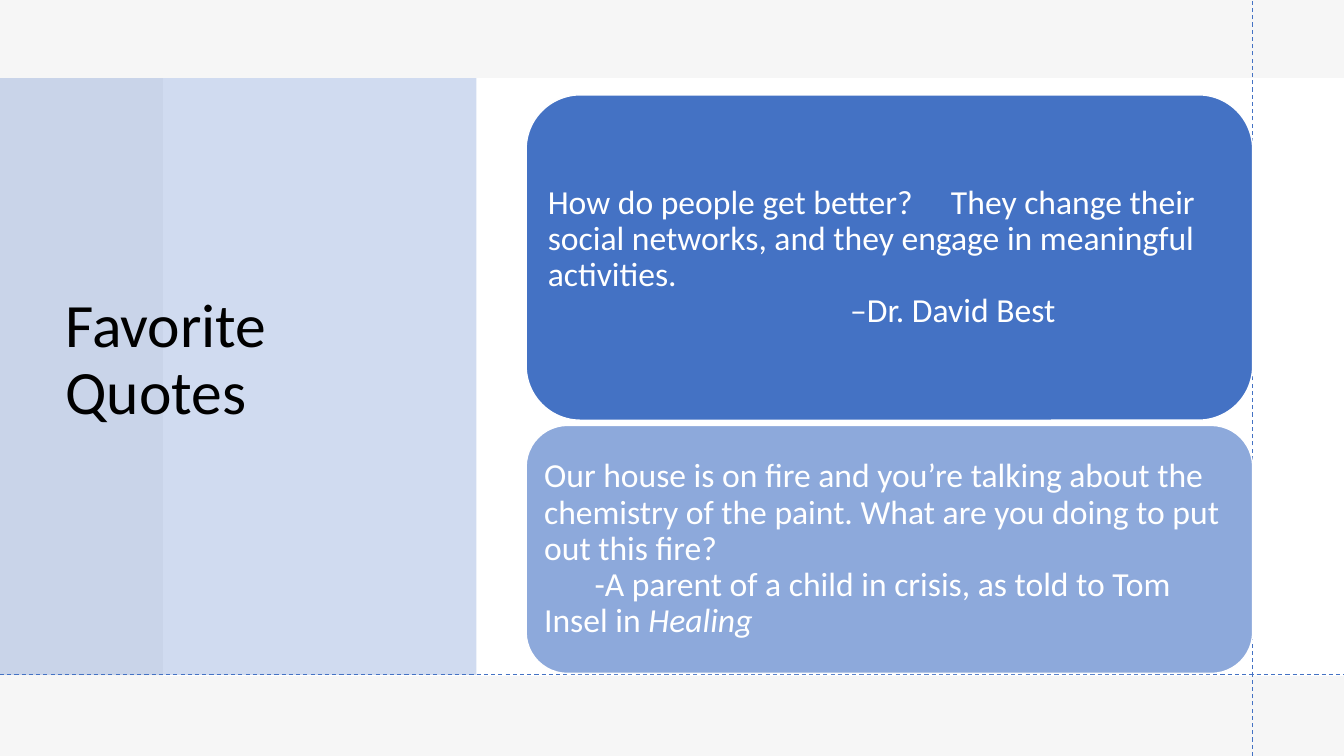
from lxml.etree import SubElement
from pptx import Presentation
from pptx.dml.color import RGBColor
from pptx.enum.dml import MSO_LINE
from pptx.enum.shapes import MSO_CONNECTOR, MSO_SHAPE
from pptx.enum.text import MSO_ANCHOR
from pptx.oxml.ns import qn
from pptx.util import Cm, Pt

WHITE = RGBColor(0xFF, 0xFF, 0xFF)
BLACK = RGBColor(0x00, 0x00, 0x00)
GREY = RGBColor(0xE7, 0xE6, 0xE6)
PALE_GREY = RGBColor(0xF7, 0xF6, 0xF6)
BLUE = RGBColor(0x44, 0x72, 0xC4)
LIGHT_BLUE = RGBColor(0x8D, 0xA9, 0xDB)

PAGE_WIDTH, PAGE_HEIGHT = 33.87, 19.05
BAND_TOP, BAND_HEIGHT = 1.97, 15.06
CARD_LEFT, CARD_WIDTH = 13.26, 18.31
CORNER = 0.167
CORNER_INSET = CORNER * 0.29

QUOTES = [
    (2.39, 8.2, BLUE, [
        (0, 0, [("How do people get better? \tThey change their social networks, "
                 "and they engage in meaningful activities.", False)]),
        (7.62, 0, [("–Dr. David Best", False)]),
    ]),
    (10.72, 6.25, LIGHT_BLUE, [
        (0, 0, [("Our house is on fire and you’re talking about the chemistry of "
                 "the paint. What are you doing to put out this fire?", False)]),
        (0, 1.27, [("-A parent of a child in crisis, as told to Tom Insel in ", False),
                   ("Healing", True)]),
    ]),
]


def apply(target, values):
    for name, value in values.items():
        setattr(target, name, value)


def add_block(slide, box, color, opacity=100, kind=MSO_SHAPE.RECTANGLE):
    block = slide.shapes.add_shape(kind, *map(Cm, box))
    block.shadow.inherit = False
    block.fill.solid()
    block.fill.fore_color.rgb = color
    block.line.fill.background()
    if opacity < 100:
        tint = block.fill._xPr.find(qn("a:solidFill"))[0]
        SubElement(tint, qn("a:alpha")).set("val", str(opacity * 1000))
    return block


def add_text(slide, box, paragraphs, size, color, margin_x, margin_y):
    frame = slide.shapes.add_textbox(*map(Cm, box)).text_frame
    apply(frame, {
        "word_wrap": True,
        "vertical_anchor": MSO_ANCHOR.MIDDLE,
        "margin_left": Cm(margin_x),
        "margin_right": Cm(margin_x),
        "margin_top": Cm(margin_y),
        "margin_bottom": Cm(margin_y),
    })
    for index, (left, first_line, runs) in enumerate(paragraphs):
        paragraph = frame.add_paragraph() if index else frame.paragraphs[0]
        paragraph.line_spacing = 0.9
        properties = paragraph._p.get_or_add_pPr()
        properties.set("marL", str(Cm(left)))
        properties.set("indent", str(Cm(first_line)))
        for words, italic in runs:
            run = paragraph.add_run()
            run.text = words
            apply(run.font, {"name": "Calibri", "size": Pt(size), "italic": italic})
            run.font.color.rgb = color


def add_guide(slide, start, end):
    guide = slide.shapes.add_connector(MSO_CONNECTOR.STRAIGHT, *map(Cm, start + end))
    guide.line.color.rgb = BLUE
    apply(guide.line, {"width": Pt(0.75), "dash_style": MSO_LINE.DASH})
    SubElement(guide._element.spPr, qn("a:effectLst"))


def add_backdrop(slide, box):
    left, top, width, height = box
    add_block(slide, box, WHITE)
    add_block(slide, box, GREY, 35)
    band_left = left + 4.11
    add_block(slide, (band_left, top + BAND_TOP, width - band_left, BAND_HEIGHT), WHITE)


def add_title_panel(slide, box):
    left, top, width, height = box
    add_block(slide, box, BLUE, 25)
    add_text(slide, (left + 1.4, top - 0.09, width - 1.98, height - 0.59),
             [(0, 0, [("Favorite Quotes", False)])], 44, BLACK, 0.25, 0.13)


def add_quote_card(slide, box, color, paragraphs):
    left, top, width, height = box
    card = add_block(slide, box, color, kind=MSO_SHAPE.ROUNDED_RECTANGLE)
    card.adjustments[0] = CORNER
    card.line.color.rgb = WHITE
    card.line.width = Pt(1)
    inset = height * CORNER_INSET
    add_text(slide, (left + inset, top + inset, width - 2 * inset, height - 2 * inset),
             paragraphs, 24, WHITE, 0.15, 0.15)


def main():
    deck = Presentation()
    apply(deck, {"slide_width": Cm(PAGE_WIDTH), "slide_height": Cm(PAGE_HEIGHT)})
    slide = deck.slides.add_slide(deck.slide_layouts[6])
    slide.background.fill.solid()
    slide.background.fill.fore_color.rgb = PALE_GREY

    add_backdrop(slide, (0, 0, PAGE_WIDTH, PAGE_HEIGHT))
    add_title_panel(slide, (0, BAND_TOP, 12.01, 15.04))
    guide_x, guide_y = CARD_LEFT + CARD_WIDTH, 16.99
    add_guide(slide, (guide_x, PAGE_HEIGHT), (guide_x, 0))
    add_guide(slide, (0, guide_y), (PAGE_WIDTH, guide_y))
    for top, height, color, paragraphs in QUOTES:
        add_quote_card(slide, (CARD_LEFT, top, CARD_WIDTH, height), color, paragraphs)

    deck.save("out.pptx")


if __name__ == "__main__":
    main()
